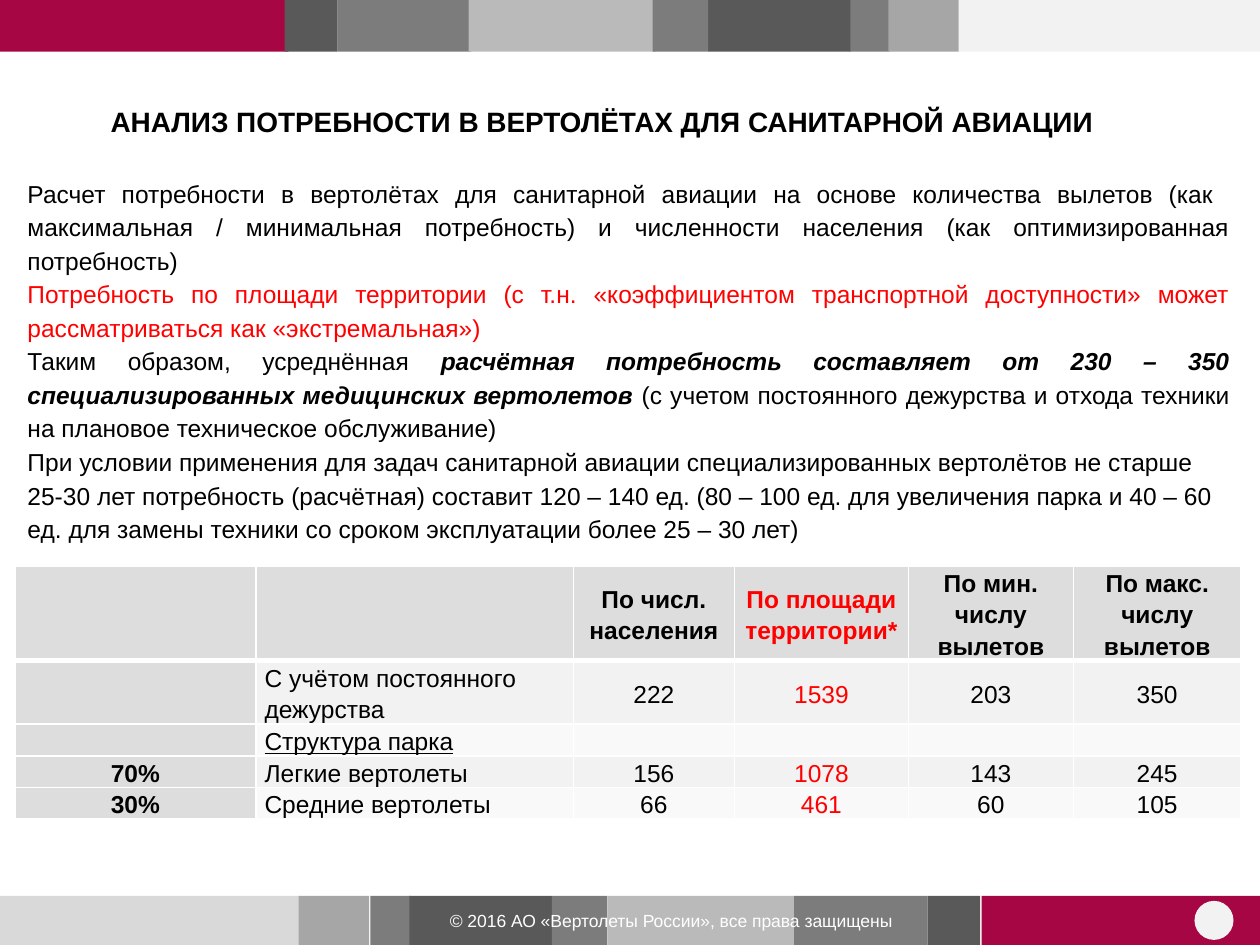
"""Build a slide on the demand for air ambulance helicopters, with text and a table."""
import lxml.etree
import pptx
import pptx.dml.color
import pptx.enum.shapes
import pptx.enum.text
import pptx.oxml.ns
import pptx.util

Inches = pptx.util.Inches
Pt = pptx.util.Pt
ALIGN = pptx.enum.text.PP_ALIGN
ANCHOR = pptx.enum.text.MSO_ANCHOR
SHAPE = pptx.enum.shapes.MSO_SHAPE
qn = pptx.oxml.ns.qn


def color(value):
    return pptx.dml.color.RGBColor.from_string(value)


def add_span(para, text, size, ink="000000", **formats):
    span = para.add_run()
    span.text = text
    span.font.color.rgb = color(ink)
    for name, value in {"name": "Arial", "size": Pt(size), **formats}.items():
        setattr(span.font, name, value)


deck = pptx.Presentation()
deck.slide_width, deck.slide_height = Inches(10), Inches(7.5)
page = deck.slides.add_slide(deck.slide_layouts[6])

footer_bars = [
    (-0.01, 2.39, "D9D9D9"), (7.79, 2.21, "A60643"), (7.36, 0.42, "595959"),
    (6.3, 1.06, "7C7C7C"), (4.82, 1.48, "BABABA"), (2.94, 0.32, "7C7C7C"),
    (2.37, 0.56, "A6A6A6"), (3.25, 1.13, "595959"), (4.38, 0.44, "7C7C7C"),
]
header_bars = [
    (7.61, 2.39, "F2F2F2"), (-0.01, 2.3, "A60643"), (2.26, 0.42, "595959"),
    (2.68, 1.06, "7C7C7C"), (3.72, 1.48, "BABABA"), (6.74, 0.32, "7C7C7C"),
    (7.05, 0.56, "A6A6A6"), (5.62, 1.13, "595959"), (5.18, 0.44, "7C7C7C"),
]
decor = [(SHAPE.RECTANGLE, left, 7.11, width, 0.41, fill) for left, width, fill in footer_bars]
decor += [(SHAPE.OVAL, 9.48, 7.15, 0.31, 0.31, "F2F2F2")]
decor += [(SHAPE.RECTANGLE, left, 0, width, 0.41, fill) for left, width, fill in header_bars]
for kind, left, top, width, height, fill in decor:
    shape = page.shapes.add_shape(kind, Inches(left), Inches(top), Inches(width), Inches(height))
    shape.shadow.inherit = False
    shape.fill.solid()
    shape.fill.fore_color.rgb = color(fill)
    shape.line.fill.background()

columns = [1.91, 2.52, 1.28, 1.38, 1.31, 1.33]
heights = [0.7, 0.4, 0.23, 0.23, 0.25]
rows = [
    ["", "", "По числ. населения", "По площади территории*", "По мин. числу вылетов",
     "По макс. числу вылетов"],
    ["", "С учётом постоянного дежурства", "222", "1539", "203", "350"],
    ["", "Структура парка", "", "", "", ""],
    ["70%", "Легкие вертолеты", "156", "1078", "143", "245"],
    ["30%", "Средние вертолеты", "66", "461", "60", "105"],
]
frame = page.shapes.add_table(len(rows), len(columns), Inches(0.12), Inches(4.49),
                              Inches(sum(columns)), Inches(sum(heights)))
table = frame.table
for column, width in zip(table.columns, columns):
    column.width = Inches(width)
for row, height in zip(table.rows, heights):
    row.height = Inches(height)
for r, texts in enumerate(rows):
    for c, text in enumerate(texts):
        cell = table.cell(r, c)
        if c > 1 or r == 0:
            anchor = ANCHOR.MIDDLE
        else:
            anchor = ANCHOR.TOP if r == 1 else ANCHOR.BOTTOM
        margins = {"margin_left": Inches(0.07), "margin_right": Inches(0.07),
                   "margin_top": 0, "margin_bottom": 0, "vertical_anchor": anchor}
        for name, value in margins.items():
            setattr(cell, name, value)
        properties = cell._tc.get_or_add_tcPr()
        for side in "LRTB":
            thick = (r, side) in ((0, "B"), (1, "T"))
            edge = lxml.etree.SubElement(properties, qn(f"a:ln{side}"), w=str(Pt(3 if thick else 1)))
            paint = lxml.etree.SubElement(edge, qn("a:solidFill"))
            lxml.etree.SubElement(paint, qn("a:srgbClr"), val="FFFFFF")
        cell.fill.solid()
        band = "F2F2F2" if r % 2 else "F9F9F9"
        cell.fill.fore_color.rgb = color("DDDDDD" if r == 0 or c == 0 else band)
        para = cell.text_frame.paragraphs[0]
        if text:
            layout = {"alignment": ALIGN.LEFT if c == 1 else ALIGN.CENTER,
                      "line_spacing": 1.15, "space_after": Pt(10)}
            for name, value in layout.items():
                setattr(para, name, value)
            add_span(para, text, 14, "FF0000" if c == 3 else "000000",
                     bold=r == 0 or c == 0, underline=(r, c) == (2, 1))
        else:
            lxml.etree.SubElement(para._p, qn("a:endParaRPr"), sz="1400")

strong = {"bold": True, "italic": True}
body = [
    (ALIGN.JUSTIFY, [("Расчет потребности в вертолётах для санитарной авиации на основе количества "
                      "вылетов (как  максимальная / минимальная потребность) и численности населения "
                      "(как оптимизированная потребность)", {})]),
    (ALIGN.JUSTIFY, [("Потребность по площади территории (с т.н. «коэффициентом транспортной "
                      "доступности» может рассматриваться как «экстремальная»)", {"ink": "FF0000"})]),
    (ALIGN.JUSTIFY, [("Таким образом, усреднённая ", {}),
                     ("расчётная потребность составляет от 230 – 350 специализированных "
                      "медицинских вертолетов", strong),
                     (" (с учетом постоянного дежурства и отхода техники на плановое "
                      "техническое обслуживание)", {})]),
    (ALIGN.LEFT, [("При условии применения для задач санитарной авиации специализированных "
                   "вертолётов не старше 25-30 лет потребность (расчётная) составит 120 – 140 ед. "
                   "(80 – 100 ед. для увеличения парка и 40 – 60 ед. для замены техники со сроком "
                   "эксплуатации более 25 – 30 лет)", {})]),
]
footer = [(ALIGN.CENTER, [("© 2016 АО «Вертолеты России», все права защищены", {"ink": "FFFFFF"})])]
title = [(ALIGN.LEFT, [("АНАЛИЗ ПОТРЕБНОСТИ В ВЕРТОЛЁТАХ ДЛЯ САНИТАРНОЙ АВИАЦИИ", {"bold": True})])]
boxes = [
    (3.35, 7.17, 3.95, 0.29, ANCHOR.TOP, 10, 1.0, footer),
    (0.12, 1.32, 9.74, 3.06, ANCHOR.MIDDLE, 14, 1.14, body),
    (0.78, 0.78, 8.74, 0.37, ANCHOR.MIDDLE, 16, 1.0, title),
]
for left, top, width, height, anchor, size, spacing, paragraphs in boxes:
    box = page.shapes.add_textbox(Inches(left), Inches(top), Inches(width), Inches(height))
    box.text_frame.word_wrap = True
    box.text_frame.vertical_anchor = anchor
    for number, (alignment, spans) in enumerate(paragraphs):
        para = box.text_frame.add_paragraph() if number else box.text_frame.paragraphs[0]
        para.alignment = alignment
        para.line_spacing = spacing
        for text, formats in spans:
            add_span(para, text, size, **formats)

deck.save("out.pptx")
